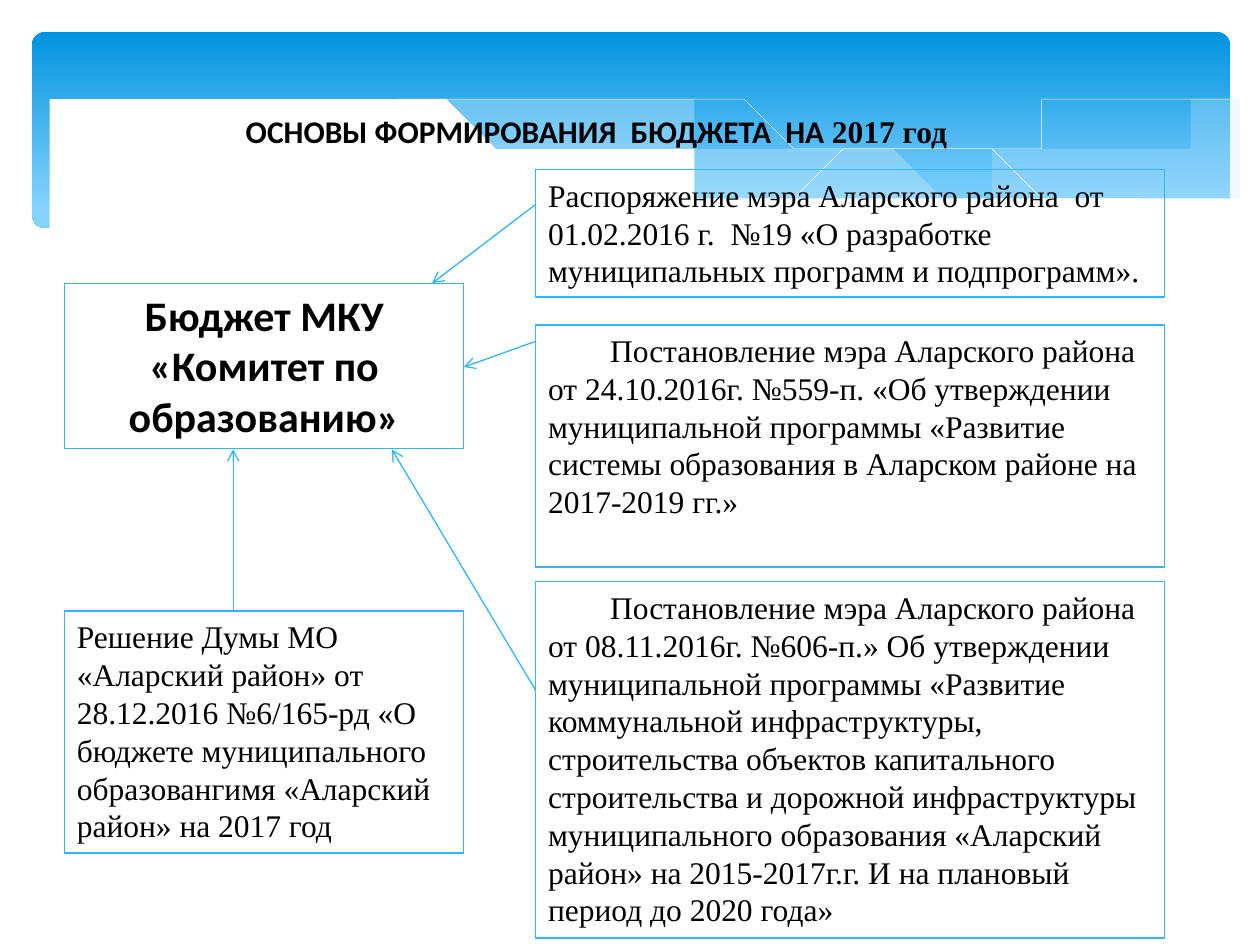
from lxml.etree import SubElement
from pptx import Presentation
from pptx.dml.color import RGBColor
from pptx.enum.shapes import MSO_CONNECTOR, MSO_SHAPE
from pptx.enum.text import MSO_ANCHOR, PP_ALIGN
from pptx.oxml.ns import qn
from pptx.util import Cm, Pt

BLACK = RGBColor(0x00, 0x00, 0x00)
WHITE = RGBColor(0xFF, 0xFF, 0xFF)
ACCENT = RGBColor(0x31, 0xB6, 0xFD)
BANNER_TOP = RGBColor(0x02, 0x93, 0xE0)
BANNER_BOTTOM = RGBColor(0x83, 0xD3, 0xFE)
WAVE_BLUE = RGBColor(0xC6, 0xE7, 0xFC)

SERIF = "Times New Roman"
SANS = "Calibri"

# Wave points and all box and arrow positions are in centimetres.
RIGHT_WAVE = [
    [(24.79, 2.39), (23.39, 2.64), (21.87, 3), (19.13, 3.63), (16.79, 4.06)],
    [(16.79, 4.06), (18.24, 4.24), (20.12, 4.37), (21.92, 4.32), (23.39, 4.06),
     (24.79, 3.58)],
]
MIDDLE_WAVE = [
    [(22.68, 4.24), (20.5, 3.91), (17.93, 3.4), (15.98, 2.95), (13.74, 2.46),
     (11.81, 2.18), (9.65, 2.03), (7.26, 2.18)],
    [(7.26, 2.18), (9.19, 2.46), (11.4, 2.95), (14.38, 3.63), (16.51, 4.01),
     (18.69, 4.29), (20.78, 4.39), (22.68, 4.24)],
]
FALLING_CURVE = [
    [(7.85, 2.29), (8.51, 2.16), (9.83, 2.08), (11.43, 2.08), (13.54, 2.24),
     (15.44, 2.49), (17.65, 2.9), (20.19, 3.45), (23.04, 4.22)],
]
RISING_CURVE = [
    [(15.57, 3.84), (17.65, 3.3), (19.71, 2.82), (22, 2.36), (23.47, 2.13),
     (24.77, 2.03)],
]
WHITE_WAVE = [
    [(0.58, 2.72), (1.32, 2.44), (2.69, 2.11), (4.9, 1.98), (7.42, 2.16),
     (9.93, 2.59), (12.07, 3.07), (14.71, 3.66), (17.48, 4.11), (19.76, 4.32),
     (21.59, 4.32), (23.37, 4.04), (24.82, 3.58)],
    [(24.82, 5.69), (0.58, 5.69)],
]

LEFT_X, LEFT_WIDTH = 1.3, 8.05
RIGHT_X, RIGHT_WIDTH = 10.8, 12.67
FIRST_LINE = 1.25

# left, top, width, height, text, first-line indent
DOCUMENTS = [
    (RIGHT_X, 6.55, RIGHT_WIDTH, 4.88,
     "Постановление мэра Аларского района от 24.10.2016г. №559-п. «Об утверждении "
     "муниципальной программы «Развитие системы образования в Аларском районе на  "
     "2017-2019 гг.»", FIRST_LINE),
    (RIGHT_X, 3.42, RIGHT_WIDTH, 2.57,
     "Распоряжение мэра Аларского района  от 01.02.2016 г.  №19 «О разработке "
     "муниципальных программ и подпрограмм».", 0),
    (RIGHT_X, 11.73, RIGHT_WIDTH, 7.18,
     "Постановление мэра Аларского района от 08.11.2016г. №606-п.» Об утверждении "
     "муниципальной программы «Развитие коммунальной инфраструктуры, строительства "
     "объектов капитального строительства и дорожной инфраструктуры муниципального "
     "образования «Аларский район» на 2015-2017г.г. И на плановый период до 2020 года»",
     FIRST_LINE),
    (LEFT_X, 12.32, LEFT_WIDTH, 4.88,
     "Решение Думы МО «Аларский район» от 28.12.2016 №6/165-рд «О бюджете "
     "муниципального образовангимя «Аларский район» на 2017 год", 0),
]
ARROWS = [
    ((4.7, 12.32), (4.7, 9.06)),
    ((RIGHT_X, 13.92), (7.9, 9.06)),
    ((RIGHT_X, 6.88), (9.35, 7.4)),
    ((RIGHT_X, 4.12), (8.71, 5.71)),
]


def smooth(points, steps=6):
    """Return points sampled from a Catmull-Rom spline through the given ones."""
    if len(points) < 3:
        return points
    padded = [points[0], *points, points[-1]]
    result = [points[0]]
    for a, b, c, d in zip(padded, padded[1:], padded[2:], padded[3:]):
        for step in range(1, steps + 1):
            t = step / steps
            result.append(tuple(
                0.5 * (2 * q + (r - p) * t + (2 * p - 5 * q + 4 * r - s) * t ** 2
                       + (3 * q - p - 3 * r + s) * t ** 3)
                for p, q, r, s in zip(a, b, c, d)))
    return result


def build_curve(slide, edges, close):
    points = [point for edge in edges for point in smooth(edge)]
    builder = slide.shapes.build_freeform(*points[0], scale=Cm(1))
    builder.add_line_segments(points[1:], close=close)
    shape = builder.convert_to_shape()
    shape.shadow.inherit = False
    return shape


def add_wave(slide, edges, color, opacity=100):
    shape = build_curve(slide, edges, close=True)
    shape.line.fill.background()
    shape.fill.solid()
    shape.fill.fore_color.rgb = color
    if opacity < 100:
        color_element = shape.element.spPr.find(qn("a:solidFill"))[0]
        SubElement(color_element, qn("a:alpha"), val=str(opacity * 1000))


def add_thin_curve(slide, edges):
    shape = build_curve(slide, edges, close=False)
    shape.fill.background()
    shape.line.color.rgb = WHITE
    shape.line.width = Pt(0.25)


def add_banner(slide):
    banner = slide.shapes.add_shape(
        MSO_SHAPE.ROUNDED_RECTANGLE, Cm(0.64), Cm(0.64), Cm(24.16), Cm(3.96))
    banner.adjustments[0] = 0.07
    banner.shadow.inherit = False
    banner.line.fill.background()
    banner.fill.gradient()
    banner.fill.gradient_angle = 270
    stops = banner.fill.gradient_stops
    for stop, position, color in zip(stops, (0, 0.9), (BANNER_TOP, BANNER_BOTTOM)):
        stop.position = position
        stop.color.rgb = color


def add_run(paragraph, text, size, font, bold=False):
    run = paragraph.add_run()
    run.text = text
    run.font.size = Pt(size)
    run.font.name = font
    run.font.bold = bold
    run.font.color.rgb = BLACK


def format_title(slide):
    title = slide.shapes.title
    slide.shapes.element.append(title.element)  # in front of the banner
    title.left, title.top, title.width, title.height = Cm(4.7), Cm(2.13), Cm(18.8), Cm(1.02)
    title.text_frame.vertical_anchor = MSO_ANCHOR.TOP
    paragraph = title.text_frame.paragraphs[0]
    paragraph.alignment = PP_ALIGN.LEFT
    add_run(paragraph, "ОСНОВЫ ФОРМИРОВАНИЯ  БЮДЖЕТА  НА ", 18, SANS, bold=True)
    add_run(paragraph, "2017 год", 18, SERIF, bold=True)


def add_box(slide, left, top, width, height):
    """Add an outlined box and return its first paragraph."""
    box = slide.shapes.add_shape(
        MSO_SHAPE.RECTANGLE, Cm(left), Cm(top), Cm(width), Cm(height))
    box.shadow.inherit = False
    box.fill.background()
    box.line.color.rgb = ACCENT
    box.line.width = Pt(0.75)
    box.text_frame.word_wrap = True
    box.text_frame.vertical_anchor = MSO_ANCHOR.TOP
    return box.text_frame.paragraphs[0]


def add_document(slide, left, top, width, height, text, indent):
    paragraph = add_box(slide, left, top, width, height)
    paragraph.alignment = PP_ALIGN.LEFT
    paragraph._p.get_or_add_pPr().set("indent", str(Cm(indent)))
    add_run(paragraph, text, 18, SERIF)


def add_arrow(slide, start, end):
    arrow = slide.shapes.add_connector(
        MSO_CONNECTOR.STRAIGHT, *(Cm(value) for value in start + end))
    arrow.line.color.rgb = ACCENT
    arrow.line.width = Pt(0.75)
    SubElement(arrow.line._get_or_add_ln(), qn("a:tailEnd"), type="arrow")
    SubElement(arrow.element.spPr, qn("a:effectLst"))


def main():
    presentation = Presentation()
    presentation.slide_width, presentation.slide_height = Cm(25.4), Cm(19.05)
    slide = presentation.slides.add_slide(presentation.slide_layouts[5])

    add_banner(slide)
    add_wave(slide, RIGHT_WAVE, WAVE_BLUE, opacity=29)
    add_wave(slide, MIDDLE_WAVE, WAVE_BLUE, opacity=40)
    add_thin_curve(slide, FALLING_CURVE)
    add_thin_curve(slide, RISING_CURVE)
    add_wave(slide, WHITE_WAVE, WHITE)
    format_title(slide)

    budget = add_box(slide, LEFT_X, 5.71, LEFT_WIDTH, 3.34)
    budget.alignment = PP_ALIGN.CENTER
    add_run(budget, "Бюджет МКУ «Комитет по образованию»", 24, SANS, bold=True)
    for document in DOCUMENTS:
        add_document(slide, *document)
    for start, end in ARROWS:
        add_arrow(slide, start, end)

    presentation.save("out.pptx")


if __name__ == "__main__":
    main()
